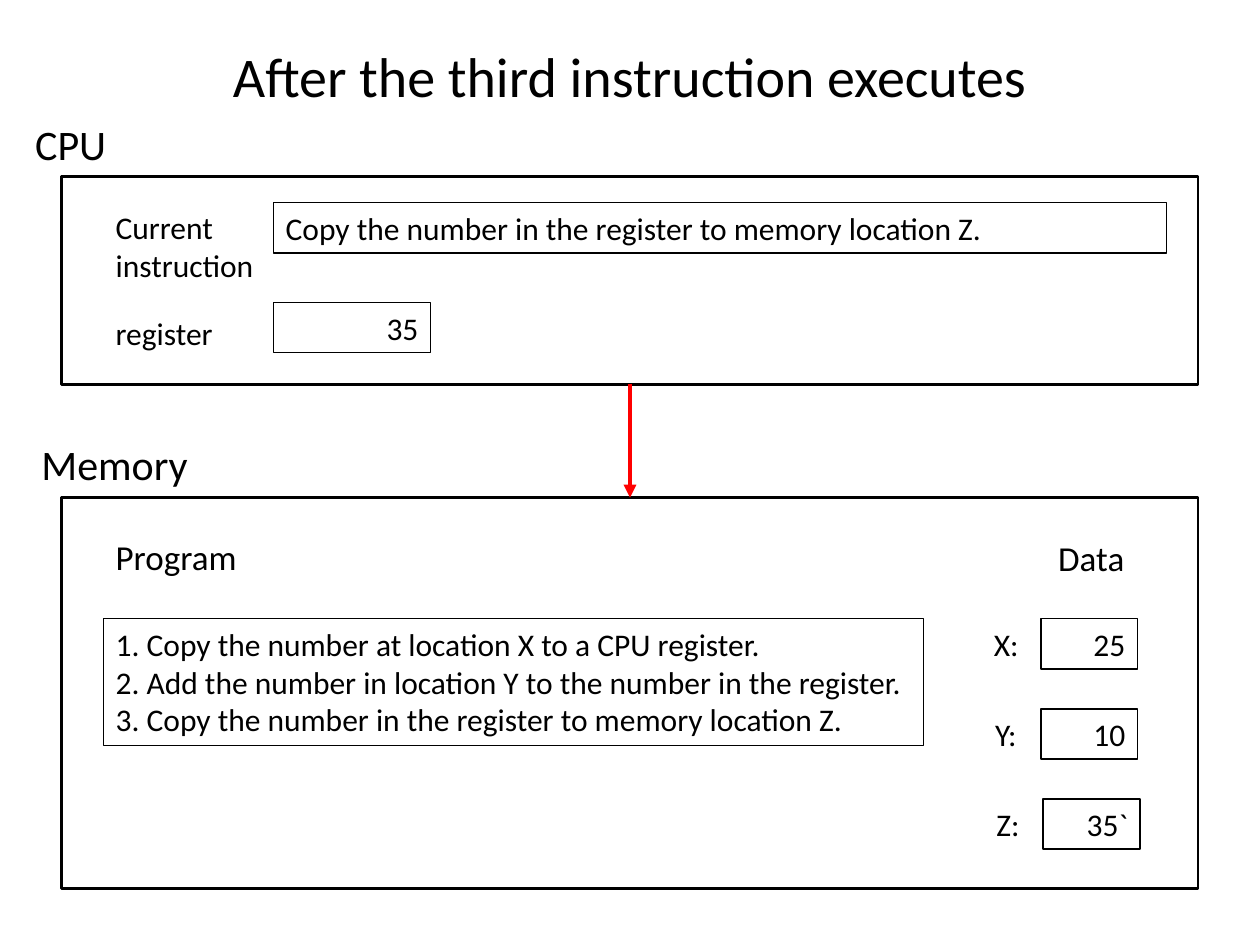
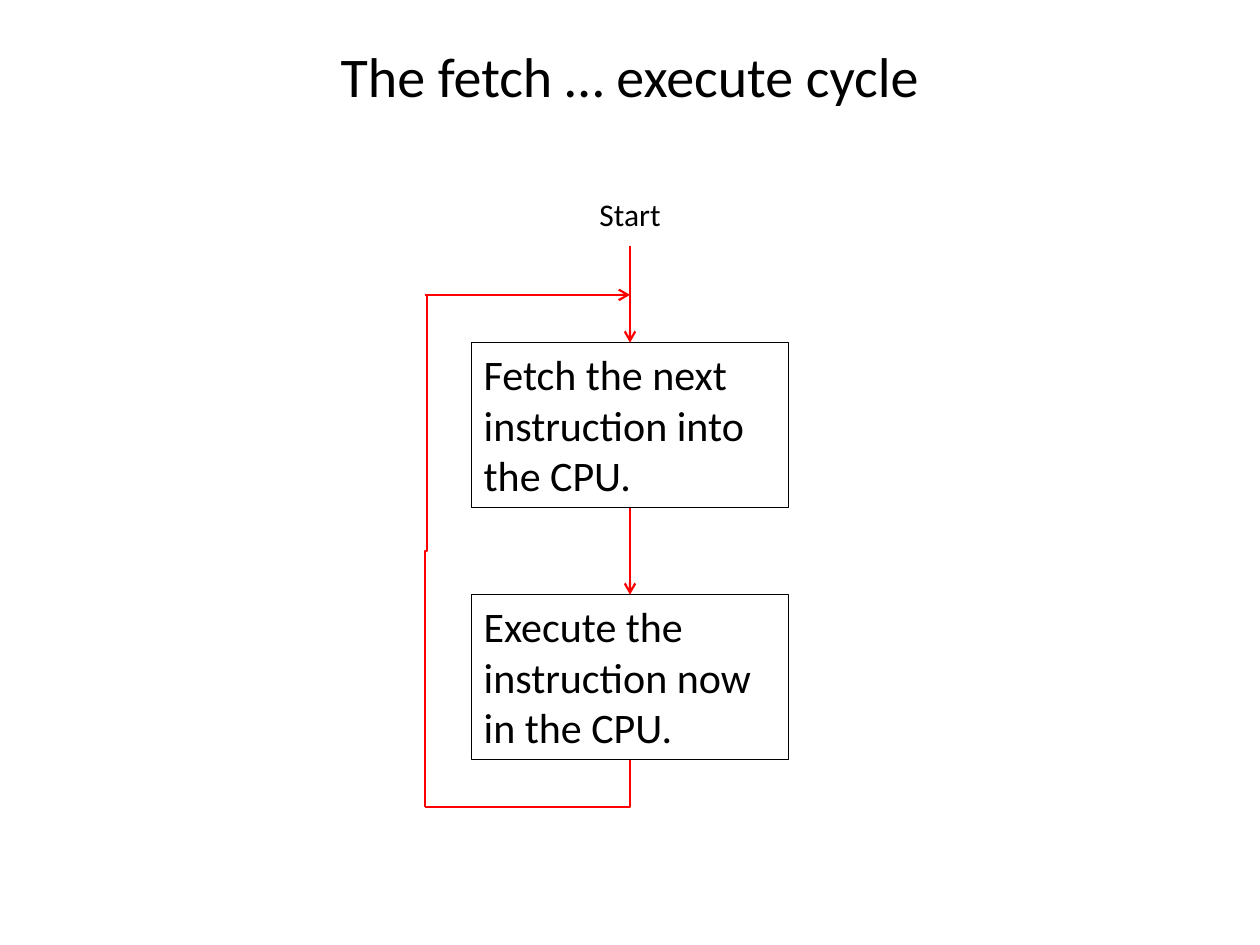
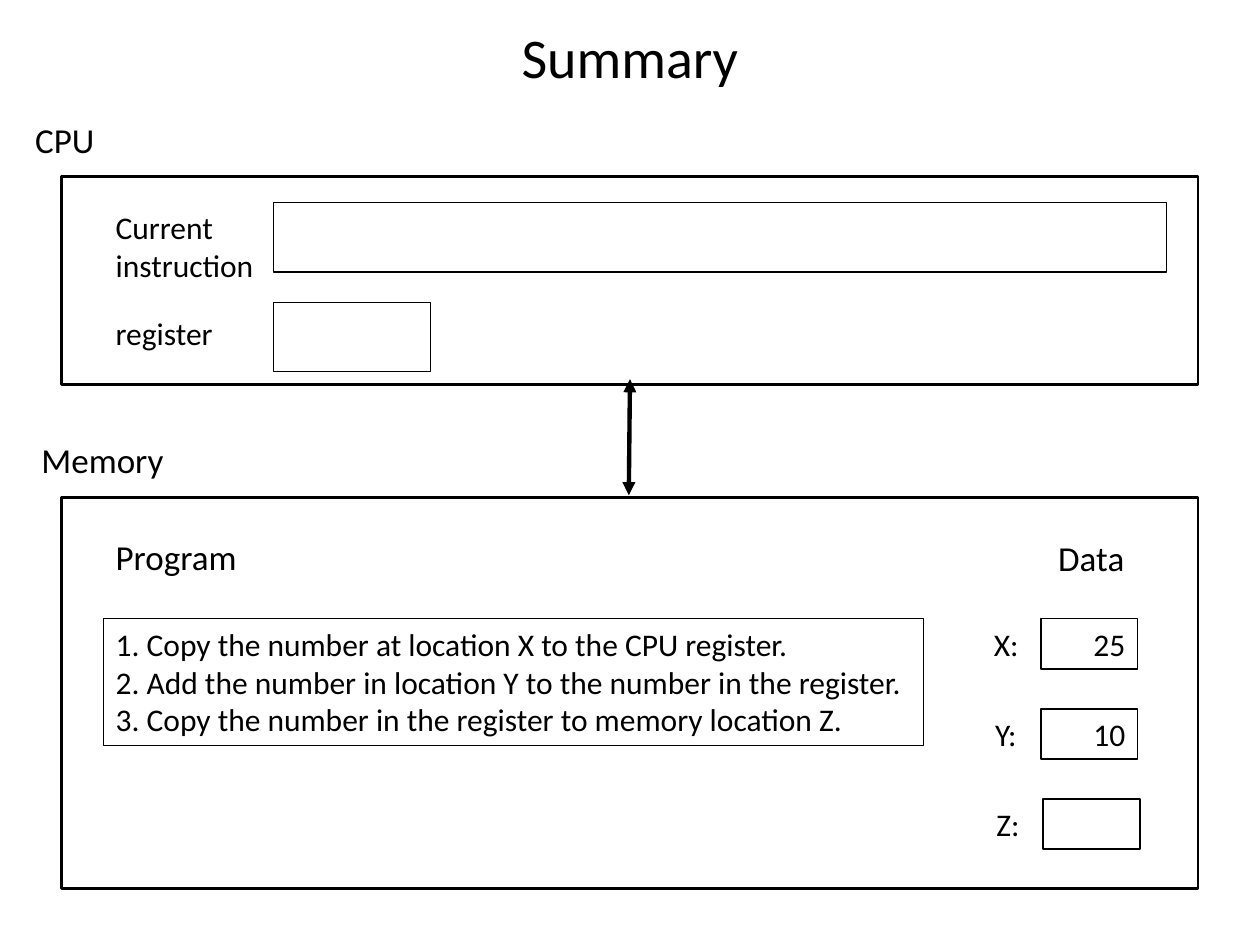
from collections import namedtuple

from pptx import Presentation
from pptx.dml.color import RGBColor
from pptx.enum.shapes import MSO_CONNECTOR as CONN, MSO_SHAPE as SHAPE
from pptx.enum.text import MSO_ANCHOR as ANCHOR, MSO_AUTO_SIZE as FIT, PP_ALIGN as ALIGN
from pptx.oxml.ns import qn
from pptx.oxml.xmlchemy import OxmlElement
from pptx.util import Pt

Box = namedtuple("Box", "x y w h")

FONT = "Calibri"
BLACK, RED = "000000", "FF0000"
SLIDE = Box(0, 0, 720, 540)
MIDDLE = SLIDE.w / 2
CPU_BOX = Box(35.3, 100.8, 649.4, 118.8)
MEMORY_BOX = Box(35.3, 284.4, 649.4, 223.2)
LINE_H = 28.8
COPY_BACK = "Copy the number in the register to memory location Z."


def rgb(value):
    return RGBColor.from_string(value)


def within(box, dx, dy, w, h):
    return Box(box.x + dx, box.y + dy, w, h)


def write(sp, text, size=18, align=ALIGN.LEFT, wrap=True):
    tf = sp.text_frame
    frame_format = {"word_wrap": wrap, "auto_size": FIT.SHAPE_TO_FIT_TEXT,
                    "vertical_anchor": ANCHOR.TOP}
    for name, value in frame_format.items():
        setattr(tf, name, value)
    for i, line in enumerate(text.split("\n")):
        p = tf.add_paragraph() if i else tf.paragraphs[0]
        p.alignment = align
        r = p.add_run()
        r.text = line
        for name, value in {"name": FONT, "size": Pt(size)}.items():
            setattr(r.font, name, value)
        r.font.color.rgb = rgb(BLACK)


def add_label(s, box, text, size=18, align=ALIGN.LEFT, wrap=False):
    sp = s.shapes.add_textbox(*map(Pt, box))
    write(sp, text, size, align, wrap)


def add_frame(s, box, text="", line=0.75, size=18, align=ALIGN.LEFT):
    """Outlined rectangle, with text if there is any."""
    sp = s.shapes.add_shape(SHAPE.RECTANGLE, *map(Pt, box))
    sp.shadow.inherit = False
    sp.fill.background()
    sp.line.color.rgb = rgb(BLACK)
    sp.line.width = Pt(line)
    if text:
        write(sp, text, size, align)
    return sp


def add_line(s, start, end, color=RED, width=1.25, head=None, tail=None, kind=CONN.STRAIGHT):
    cxn = s.shapes.add_connector(kind, *map(Pt, start + end))
    cxn.line.color.rgb = rgb(color)
    cxn.line.width = Pt(width)
    ln = cxn.line._get_or_add_ln()
    for tag, arrow in (("a:headEnd", head), ("a:tailEnd", tail)):
        if arrow:
            tip = OxmlElement(tag)
            tip.set("type", arrow)
            ln.append(tip)
    cxn._element.spPr.append(OxmlElement("a:effectLst"))
    return cxn


def add_upright_elbow(s, start, end, preset):
    """Elbow that leaves its start vertically: the preset turned by 90 degrees."""
    cx, cy = ((a + b) / 2 for a, b in zip(start, end))
    turned = [(cx + y - cy, cy + cx - x) for x, y in (start, end)]
    cxn = add_line(s, *turned, kind=CONN.ELBOW)
    spPr = cxn._element.spPr
    spPr.find(qn("a:xfrm")).set("rot", "5400000")
    spPr.find(qn("a:prstGeom")).set("prst", preset)


def add_title(s, text, width, top=20.2):
    add_label(s, Box(MIDDLE - width / 2, top, width, 46), text, 32, ALIGN.CENTER)


def add_cpu(s, box, caption_size, instruction="", register="", field_h=LINE_H):
    panel = add_frame(s, box, line=1.5)
    add_label(s, within(box, -22.3, -36.7, 55.4, 36), "CPU", caption_size)
    add_label(s, within(box, 23.7, 14.4, 115.2, 51), "Current instruction", wrap=True)
    add_label(s, within(box, 23.7, 74.9, 82.8, LINE_H), "register", wrap=True)
    add_frame(s, within(box, 120.9, 15.1, 510.5, field_h), instruction)
    add_frame(s, within(box, 120.9, 72, 90, field_h), register, align=ALIGN.RIGHT)
    return panel


def add_memory(s, box, caption_size, first_step, z_value=""):
    panel = add_frame(s, box, line=1.5)
    add_label(s, within(box, -18.7, -37.4, 98.6, 36), "Memory", caption_size)
    add_label(s, within(box, 23.7, 18, 84.2, 31.7), "Program", 20)
    add_label(s, within(box, 562.3, 18.7, 52.6, 31.7), "Data", 20)
    steps = [first_step, "Add the number in location Y to the number in the register.", COPY_BACK]
    program = "\n".join(f"{n}. {step}" for n, step in enumerate(steps, 1))
    add_frame(s, within(box, 23.7, 69.1, 468.7, 72.7), program)
    cells = [("X:", "25", 0), ("Y:", "10", 0), ("Z:", z_value, 1.4)]
    for i, (name, value, shift) in enumerate(cells):
        top = 69.1 + 51.5 * i
        add_label(s, within(box, 525.6 + 0.7 * i, top, 30, LINE_H), name)
        add_frame(s, within(box, 559.4 + shift, top, 55.4, LINE_H), value, 1, align=ALIGN.RIGHT)
    return panel


def third_instruction_slide(s):
    add_title(s, "After the third instruction executes", 473.8)
    cpu = add_cpu(s, CPU_BOX, 24, COPY_BACK, "35")
    memory = add_memory(s, MEMORY_BOX, 24, "Copy the number at location X to a CPU register.", "35`")
    arrow = add_line(s, (MIDDLE, CPU_BOX.y + CPU_BOX.h), (MIDDLE, MEMORY_BOX.y),
                     width=2.5, tail="triangle")
    arrow.begin_connect(cpu, 2)
    arrow.end_connect(memory, 0)


def cycle_slide(s):
    add_title(s, "The fetch … execute cycle", 347.8)
    fetch_box = Box(269.3, 195.8, 181.4, 94.3)
    execute_box = fetch_box._replace(y=339.8)
    fetch = add_frame(s, fetch_box, "Fetch the next instruction into the CPU.", size=24)
    execute = add_frame(s, execute_box, "Execute the instruction now in the CPU.", size=24)
    add_label(s, Box(335.2, 108, 49.7, LINE_H), "Start", align=ALIGN.CENTER)

    entry = add_line(s, (MIDDLE, 140.4), (MIDDLE, fetch_box.y), tail="arrow")
    entry.end_connect(fetch, 0)
    step = add_line(s, (MIDDLE, fetch_box.y + fetch_box.h), (MIDDLE, execute_box.y), tail="arrow")
    step.begin_connect(fetch, 2)
    step.end_connect(execute, 0)

    loop_x, loop_top, loop_bottom = 242.7, 168.5, 461
    add_upright_elbow(s, (MIDDLE, execute_box.y + execute_box.h), (loop_x, loop_bottom),
                      "bentConnector2")
    add_upright_elbow(s, (loop_x, loop_bottom), (loop_x + 1.2, loop_top), "bentConnector3")
    add_line(s, (loop_x, loop_top), (MIDDLE, loop_top), tail="arrow")


def summary_slide(s):
    add_title(s, "Summary", 139.7, top=9.4)
    add_cpu(s, CPU_BOX, 20, field_h=39.6)
    add_memory(s, MEMORY_BOX, 20, "Copy the number at location X to the CPU register.")
    add_line(s, (MIDDLE, 216.7), (MIDDLE - 0.7, 283), BLACK, 2.5, "triangle", "triangle")


def main():
    prs = Presentation()
    prs.slide_width, prs.slide_height = Pt(SLIDE.w), Pt(SLIDE.h)
    for build in (third_instruction_slide, cycle_slide, summary_slide):
        build(prs.slides.add_slide(prs.slide_layouts[6]))
    prs.save("out.pptx")


if __name__ == "__main__":
    main()
